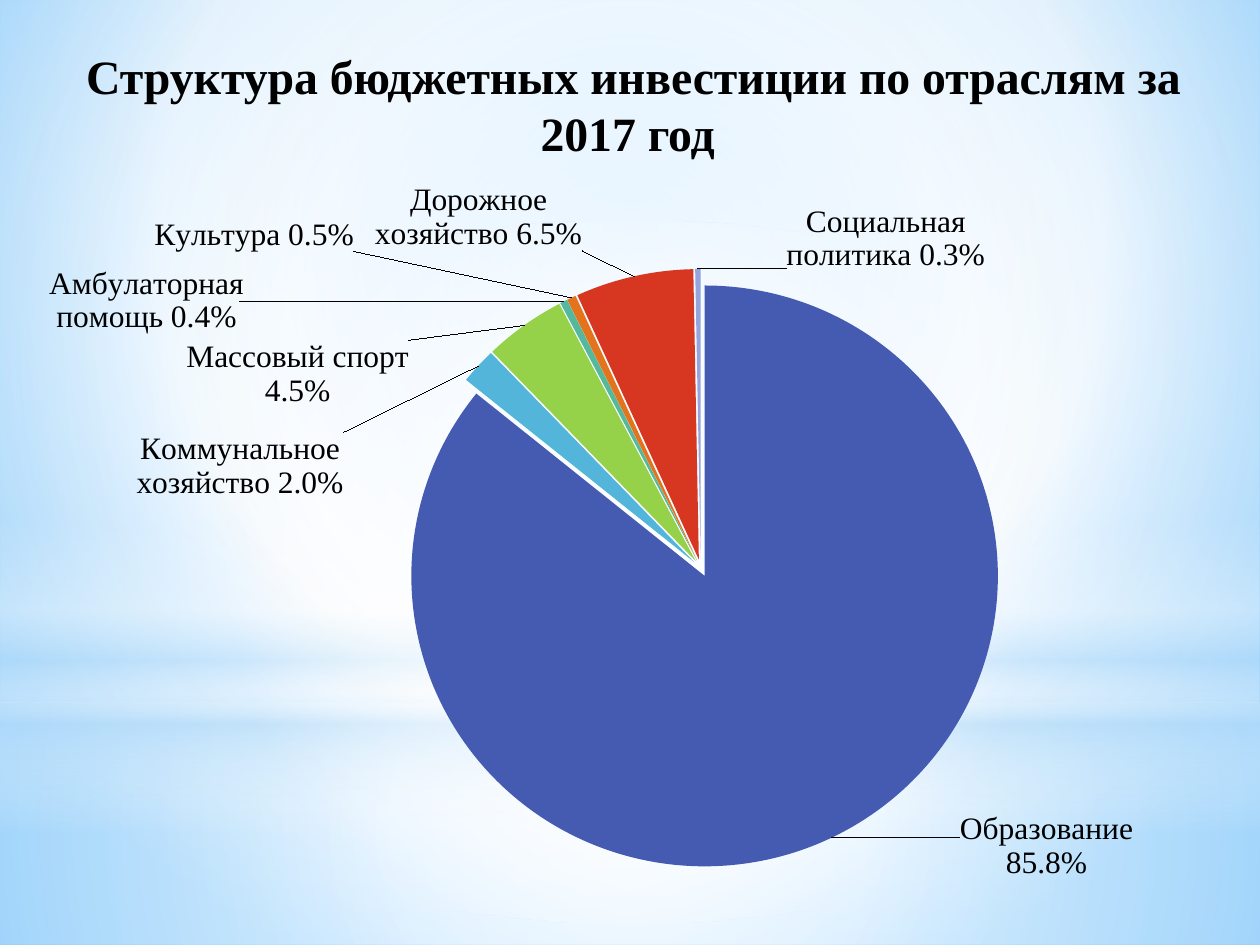
import math

import pptx
import pptx.chart.data
import pptx.dml.color
import pptx.enum.chart
import pptx.enum.shapes
import pptx.enum.text
import pptx.oxml
import pptx.oxml.ns
import pptx.util

Cm, Pt = pptx.util.Cm, pptx.util.Pt
RGB = pptx.dml.color.RGBColor
SHAPES = pptx.enum.shapes.MSO_SHAPE
qn, nsdecls = pptx.oxml.ns.qn, pptx.oxml.ns.nsdecls

# Content
TITLE = " Структура бюджетных инвестиции по отраслям за 2017 год"
FONT = "Times New Roman"
BLACK = RGB(0x00, 0x00, 0x00)

# Sector, share, colour, label corner nearest to the pie (cm on the slide)
SECTORS = [
    ("Образование", 0.858, RGB(0x45, 0x5A, 0xB1), (19.29, 16.37)),
    ("Коммунальное хозяйство", 0.02, RGB(0x52, 0xB5, 0xD9), (7.04, 10.24)),
    ("Массовый спорт", 0.045, RGB(0x95, 0xD2, 0x4A), (8.33, 8.39)),
    ("Амбулаторная помощь", 0.004, RGB(0x53, 0xB8, 0x9C), (4.9, 6.91)),
    ("Культура", 0.005, RGB(0xE4, 0x73, 0x1D), (7.2, 5.22)),
    ("Дорожное хозяйство", 0.065, RGB(0xD7, 0x37, 0x20), (11.77, 5.22)),
    ("Социальная политика", 0.003, RGB(0x97, 0xA3, 0xDC), (17.86, 5.66)),
]

# Chart frame, pie centre and outer radius (cm)
CHART_BOX = (0.99, 3.66, 23.8, 14.73)
PIE_CENTRE = (14.13, 11.53)
PIE_RADIUS = 6.09
EXPLOSION = 3

# Gradients: stops are (position, colour, opacity), all in percent
CIRCLE = '<a:path path="circle"><a:fillToRect l="{}000" t="{}000" r="{}000" b="{}000"/></a:path>'
MIDDLE = CIRCLE.format(50, 50, 50, 50)
DOWNWARD = '<a:lin ang="5400000" scaled="0"/>'
BACKGROUND = ([(0, "9ED5FF", 100), (60, "FFFFFF", 100), (100, "5BB9FF", 100)],
              CIRCLE.format(20, 10, 20, 60))
BACKDROP = [
    (SHAPES.RECTANGLE, (0, 14.17, 25.4, 4.88),
     [(0, "FFFFFF", 91), (37, "FFFFFF", 76), (100, "B4DCFA", 79)], MIDDLE),
    (SHAPES.RECTANGLE, (0, 0, 25.4, 14.17),
     [(0, "FFFFFF", 89), (48, "FFFFFF", 62), (100, "B4DCFA", 79)], MIDDLE),
    (SHAPES.RECTANGLE, (0, 10.46, 25.4, 6.35),
     [(0, "FFFFFF", 0), (29, "FFFFFF", 30), (45, "B4DCFA", 40),
      (55, "FFFFFF", 26), (65, "B4DCFA", 60), (100, "FFFFFF", 0)], DOWNWARD),
    (SHAPES.OVAL, (0, 4.45, 25.4, 14.17),
     [(0, "FFFFFF", 100), (56, "FFFFFF", 0)], MIDDLE),
]


def lengths(box):
    return [Cm(value) for value in box]


def set_gradient(element, stops, direction):
    """Replace the solid fill inside element with a gradient."""
    marks = "".join(
        f'<a:gs pos="{position}000"><a:srgbClr val="{colour}">'
        f'<a:alpha val="{opacity}000"/></a:srgbClr></a:gs>'
        for position, colour, opacity in stops)
    gradient = pptx.oxml.parse_xml(
        f'<a:gradFill {nsdecls("a")} rotWithShape="1"><a:gsLst>{marks}</a:gsLst>'
        f'{direction}</a:gradFill>')
    solid = element.find(".//" + qn("a:solidFill"))
    solid.getparent().replace(solid, gradient)


def add_backdrop(page):
    page.background.fill.solid()
    page.background.fill.fore_color.rgb = RGB(0xFF, 0xFF, 0xFF)
    set_gradient(page.element, *BACKGROUND)
    for kind, box, stops, direction in BACKDROP:
        shape = page.shapes.add_shape(kind, *lengths(box))
        shape.shadow.inherit = False
        shape.line.fill.background()
        shape.fill.solid()
        set_gradient(shape.element.spPr, stops, direction)


def add_title(page):
    title = page.shapes.title
    page.shapes.element.append(title.element)  # in front of the backdrop
    title.left, title.top, title.width, title.height = lengths((0.3, 0.53, 24.71, 3.12))
    frame = title.text_frame
    frame.text = TITLE
    frame.word_wrap = True
    frame.auto_size = pptx.enum.text.MSO_AUTO_SIZE.NONE
    frame.vertical_anchor = pptx.enum.text.MSO_ANCHOR.MIDDLE
    para = frame.paragraphs[0]
    para.alignment = pptx.enum.text.PP_ALIGN.CENTER
    font = para.runs[0].font
    font.name, font.size, font.bold = FONT, Pt(27.3), True
    font.color.rgb = BLACK


def layout_xml(x, y, extra=""):
    return pptx.oxml.parse_xml(
        f'<c:layout {nsdecls("c")}><c:manualLayout>{extra}'
        f'<c:x val="{x:.4f}"/><c:y val="{y:.4f}"/>'
        '</c:manualLayout></c:layout>')


def set_label(point, offset):
    """Show category and share, moved by offset from the slice's outer edge."""
    label = point.data_label
    label.font.name, label.font.size = FONT, Pt(18)
    label.font.color.rgb = BLACK
    label.position = pptx.enum.chart.XL_LABEL_POSITION.OUTSIDE_END
    element = label._dLbl
    element.find(qn("c:showCatName")).set("val", "1")
    element.find(qn("c:showVal")).set("val", "1")
    element.find(qn("c:showPercent")).set("val", "0")
    number_format = pptx.oxml.parse_xml(
        f'<c:numFmt {nsdecls("c")} formatCode="0.0%" sourceLinked="0"/>')
    element.insert(1, layout_xml(*offset))
    element.insert(2, number_format)
    element.append(pptx.oxml.parse_xml(
        f'<c:separator {nsdecls("c")}> </c:separator>'))


def add_pie(page):
    data = pptx.chart.data.CategoryChartData(number_format="0.0%")
    data.categories = [name for name, *_ in SECTORS]
    data.add_series("Series 1", [share for _, share, *_ in SECTORS])
    chart = page.shapes.add_chart(
        pptx.enum.chart.XL_CHART_TYPE.PIE, *lengths(CHART_BOX), data).chart
    chart.has_legend = False
    chart.has_title = False
    chart.font.name, chart.font.size = "Karla", Pt(18)
    chart.font.color.rgb = BLACK

    # Plot area from the pie's centre and radius
    left, top, width, height = CHART_BOX
    area = chart._chartSpace.find(".//" + qn("c:plotArea"))
    for old in area.findall(qn("c:layout")):
        area.remove(old)
    layout = layout_xml((PIE_CENTRE[0] - PIE_RADIUS - left) / width,
                        (PIE_CENTRE[1] - PIE_RADIUS - top) / height,
                        '<c:layoutTarget val="inner"/><c:xMode val="edge"/><c:yMode val="edge"/>')
    for tag, size in (("w", width), ("h", height)):
        layout[0].append(pptx.oxml.parse_xml(
            f'<c:{tag} {nsdecls("c")} val="{2 * PIE_RADIUS / size:.4f}"/>'))
    area.insert(0, layout)

    # Slices and labels
    plot = chart.plots[0]
    plot.vary_by_categories = True
    series = plot.series[0]
    start = 0
    for index, (_, share, colour, corner) in enumerate(SECTORS):
        point = series.points[index]
        point.format.fill.solid()
        point.format.fill.fore_color.rgb = colour
        point.format.line.fill.background()
        angle = 2 * math.pi * (start + share / 2)
        start += share
        edge_x = PIE_CENTRE[0] + PIE_RADIUS * math.sin(angle)
        edge_y = PIE_CENTRE[1] - PIE_RADIUS * math.cos(angle)
        set_label(point, ((corner[0] - edge_x) / width, (corner[1] - edge_y) / height))
    series._element.find(qn("c:dPt")).addprevious(pptx.oxml.parse_xml(
        f'<c:explosion {nsdecls("c")} val="{EXPLOSION}"/>'))
    leader = series._element.find(qn("c:dLbls")).find(qn("c:showLeaderLines"))
    if leader is not None:
        leader.set("val", "1")


def main():
    deck = pptx.Presentation()
    deck.slide_width, deck.slide_height = Cm(25.4), Cm(19.05)
    page = deck.slides.add_slide(deck.slide_layouts[5])
    add_backdrop(page)
    add_title(page)
    add_pie(page)
    deck.save("out.pptx")


if __name__ == "__main__":
    main()
